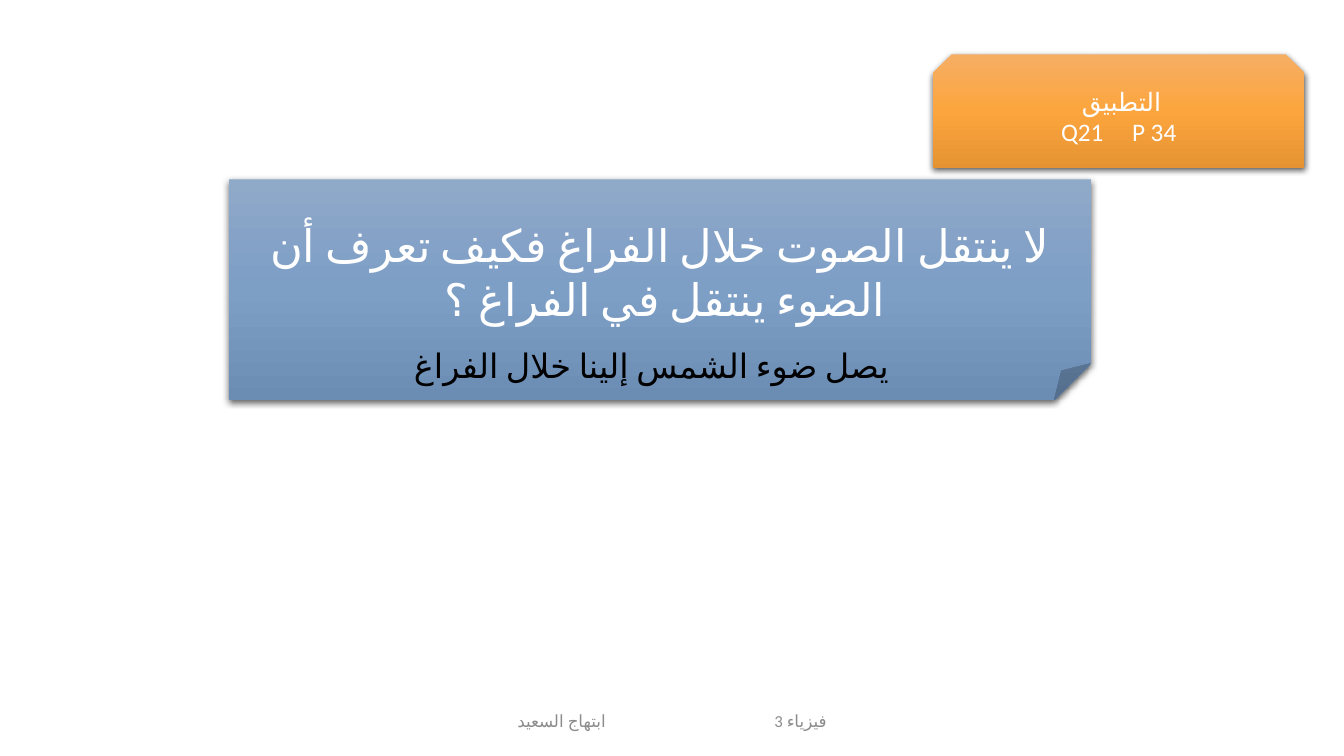
from copy import deepcopy
from dataclasses import dataclass
from lxml import etree
from pptx import Presentation
from pptx.dml.color import RGBColor
from pptx.enum import lang, shapes, text
from pptx.oxml import ns
from pptx.util import Inches, Pt

KIND = shapes.MSO_SHAPE
FACE = "Calibri"


@dataclass
class Label:
    box: tuple[float, float, float, float]
    words: str
    size: int
    color: str
    anchor: text.MSO_ANCHOR = text.MSO_ANCHOR.MIDDLE


@dataclass
class Card:
    kind: KIND
    label: Label
    stops: tuple[str, str, str]


def paint(target, color: str) -> None:
    target.rgb = RGBColor.from_string(color)


def style(line, size: int, color: str) -> None:
    line.alignment = text.PP_ALIGN.CENTER
    line._p.get_or_add_pPr().set("rtl", "1")
    font = line.font
    font.name = FACE
    font.size = Pt(size)
    font.language_id = lang.MSO_LANGUAGE_ID.ARABIC
    paint(font.color, color)
    etree.SubElement(font._element, ns.qn("a:cs"), typeface=FACE)


def write(shape, label: Label) -> None:
    frame = shape.text_frame
    frame.word_wrap = True
    frame.vertical_anchor = label.anchor
    frame.text = label.words
    for line in frame.paragraphs:
        style(line, label.size, label.color)
        for run in line.runs:
            run.font.language_id = lang.MSO_LANGUAGE_ID.ARABIC


def shade(shape, stops: tuple[str, str, str]) -> None:
    shape.fill.gradient()
    shape.fill.gradient_angle = 270
    first = shape._element.spPr.find(".//" + ns.qn("a:gs"))
    first.addnext(deepcopy(first))
    for stop, place, color in zip(shape.fill.gradient_stops, (0, 0.5, 1), stops):
        stop.position = place
        paint(stop.color, color)


def cast(shape) -> None:
    shape.shadow.inherit = False
    effects = shape._element.spPr.find(ns.qn("a:effectLst"))
    outer = etree.SubElement(
        effects, ns.qn("a:outerShdw"), blurRad=str(Pt(4.5)),
        dist=str(Pt(1.5)), dir="5400000", rotWithShape="0")
    black = etree.SubElement(outer, ns.qn("a:srgbClr"), val="000000")
    etree.SubElement(black, ns.qn("a:alpha"), val="63000")


def add_card(slide, card: Card):
    shape = slide.shapes.add_shape(card.kind, *map(Inches, card.label.box))
    shade(shape, card.stops)
    shape.line.fill.background()
    cast(shape)
    write(shape, card.label)
    return shape


def add_label(slide, label: Label) -> None:
    write(slide.shapes.add_textbox(*map(Inches, label.box)), label)


def add_source(shape, size: int, color: str, gap: float) -> None:
    line = shape.text_frame.add_paragraph()
    for part in ("Q21", " ", "P 34"):
        run = line.add_run()
        run.text = part
        if part == " ":
            run.font._element.set("spc", str(int(gap * 100)))
    style(line, size, color)


TOPIC = Card(
    KIND.SNIP_2_SAME_RECTANGLE,
    Label((9.25, 0.54, 3.69, 1.13), "التطبيق ", 18, "FFFFFF"),
    ("F6AE64", "FCA53E", "E59332"))
QUERY = Card(
    KIND.FOLDED_CORNER,
    Label((2.27, 1.78, 8.55, 2.19),
          "لا ينتقل الصوت خلال الفراغ فكيف تعرف أن الضوء ينتقل في الفراغ ؟ ",
          32, "FFFFFF"),
    ("8FA9C9", "7D9EC5", "6B8CB3"))
LABELS = (
    Label((2.66, 3.37, 7.53, 0.5), "يصل ضوء الشمس إلينا خلال الفراغ ",
          24, "000000", text.MSO_ANCHOR.TOP),
    Label((6.96, 6.95, 1.96, 0.4), "فيزياء 3", 12, "8C8C8C"),
    Label((4.42, 6.95, 2.3, 0.4), "ابتهاج السعيد", 12, "8C8C8C"),
)


def main() -> None:
    deck = Presentation()
    deck.slide_width, deck.slide_height = Inches(13.33), Inches(7.5)
    slide = deck.slides.add_slide(deck.slide_layouts[6])
    topic = add_card(slide, TOPIC)
    add_source(topic, TOPIC.label.size, TOPIC.label.color, 16.3)
    add_card(slide, QUERY)
    for label in LABELS:
        add_label(slide, label)
    deck.save("out.pptx")


if __name__ == "__main__":
    main()
